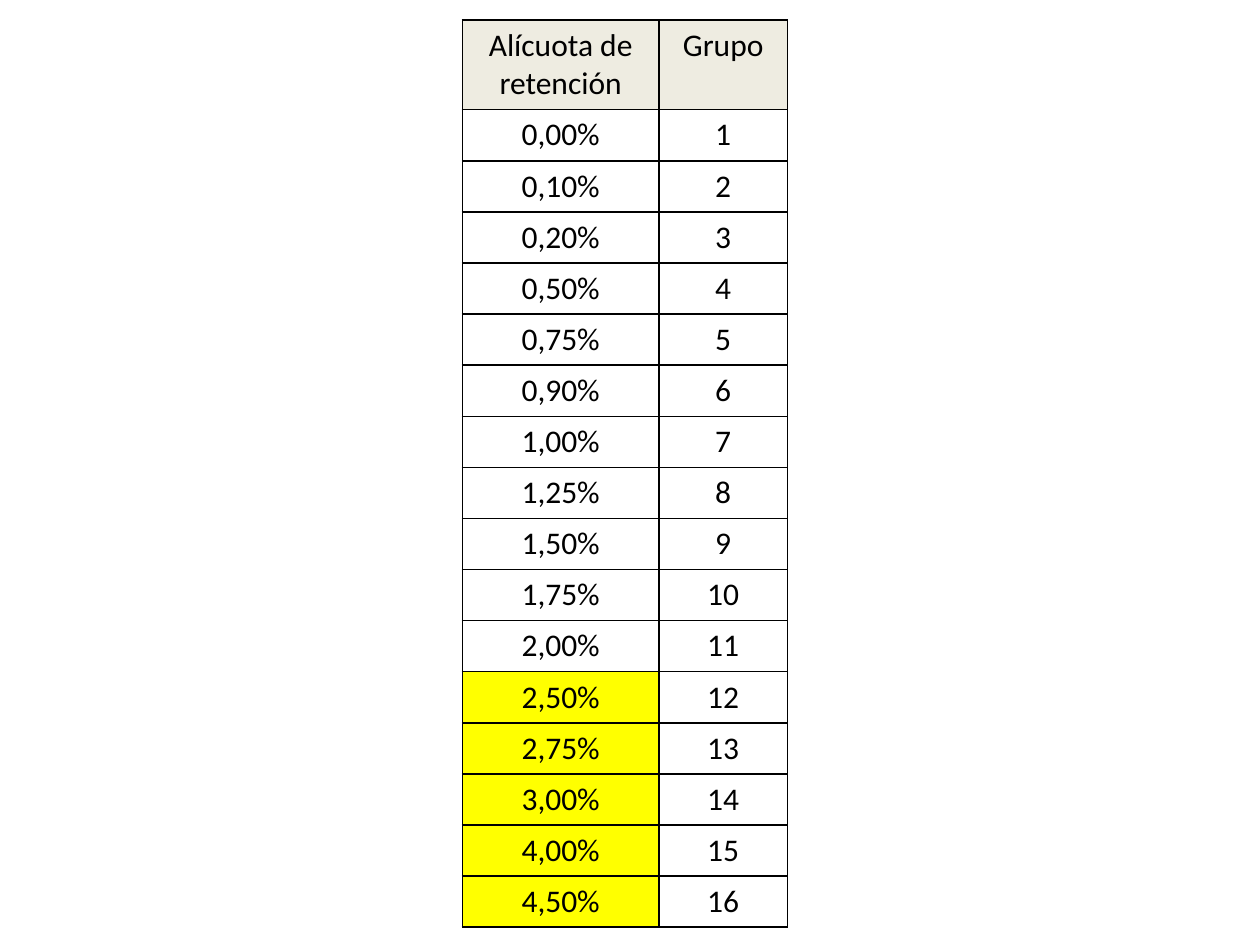
import lxml.etree
import pptx
import pptx.dml.color
import pptx.enum.text
import pptx.oxml.ns
import pptx.util
from pptx.util import Inches

COLORS = {"text": "000000", "border": "000000", "header": "EEECE1", "highlight": "FFFF00"}
FONT = "Calibri"
HEADERS = ("Alícuota de retención", "Grupo")
RATES = (
    "0,00%", "0,10%", "0,20%", "0,50%", "0,75%", "0,90%", "1,00%", "1,25%",
    "1,50%", "1,75%", "2,00%", "2,50%", "2,75%", "3,00%", "4,00%", "4,50%",
)
FIRST_HIGHLIGHTED_GROUP = 12
COLUMN_WIDTHS = (1.56, 1.02)
HEADER_HEIGHT = 0.63
ROW_HEIGHT = 0.37


def rgb(name):
    """Return the named colour as an RGBColor."""
    return pptx.dml.color.RGBColor.from_string(COLORS[name])


def add_borders(cell):
    """Draw a thin solid line on all four sides of a cell."""
    qn = pptx.oxml.ns.qn
    properties = cell._tc.get_or_add_tcPr()
    for position, side in enumerate(("lnL", "lnR", "lnT", "lnB")):
        line = lxml.etree.Element(qn(f"a:{side}"), w=str(pptx.util.Pt(1)))
        fill = lxml.etree.SubElement(line, qn("a:solidFill"))
        lxml.etree.SubElement(fill, qn("a:srgbClr"), val=COLORS["border"])
        properties.insert(position, line)


def format_cell(cell, text, fill_name):
    """Write centred text in a cell and set its fill and borders."""
    cell.text_frame.text = text
    paragraph = cell.text_frame.paragraphs[0]
    paragraph.alignment = pptx.enum.text.PP_ALIGN.CENTER
    font = paragraph.runs[0].font
    font.name = FONT
    font.size = pptx.util.Pt(18)
    font.bold = False
    font.color.rgb = rgb("text")
    if fill_name:
        cell.fill.solid()
        cell.fill.fore_color.rgb = rgb(fill_name)
    else:
        cell.fill.background()
    add_borders(cell)


def add_rate_table(slide, left, top, width, height):
    """Place the table of withholding rates and groups in the given box."""
    rows = [HEADERS] + [(rate, str(group)) for group, rate in enumerate(RATES, 1)]
    table = slide.shapes.add_table(
        len(rows), len(HEADERS), left, top, width, height
    ).table
    table.horz_banding = False
    for column, column_width in zip(table.columns, COLUMN_WIDTHS):
        column.width = Inches(column_width)
    for row_index, values in enumerate(rows):
        is_header = row_index == 0
        table.rows[row_index].height = Inches(HEADER_HEIGHT if is_header else ROW_HEIGHT)
        for column_index, text in enumerate(values):
            fill_name = "header" if is_header else None
            if column_index == 0 and row_index >= FIRST_HIGHLIGHTED_GROUP:
                fill_name = "highlight"
            format_cell(table.cell(row_index, column_index), text, fill_name)


def main():
    """Build the slide and save the presentation."""
    presentation = pptx.Presentation()
    presentation.slide_width = Inches(10)
    presentation.slide_height = Inches(7.5)
    slide = presentation.slides.add_slide(presentation.slide_layouts[6])
    add_rate_table(slide, Inches(3.67), Inches(0.16), Inches(2.58), Inches(7.1))
    presentation.save("out.pptx")


if __name__ == "__main__":
    main()
